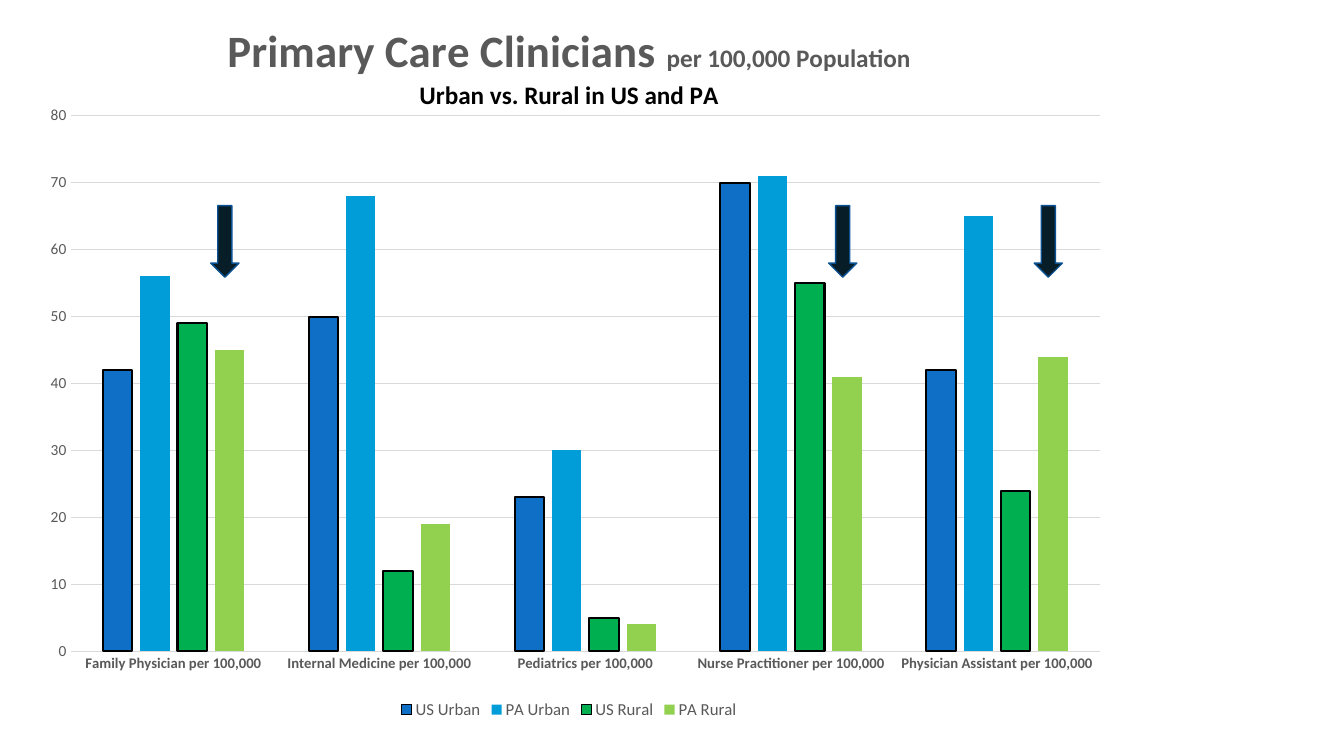
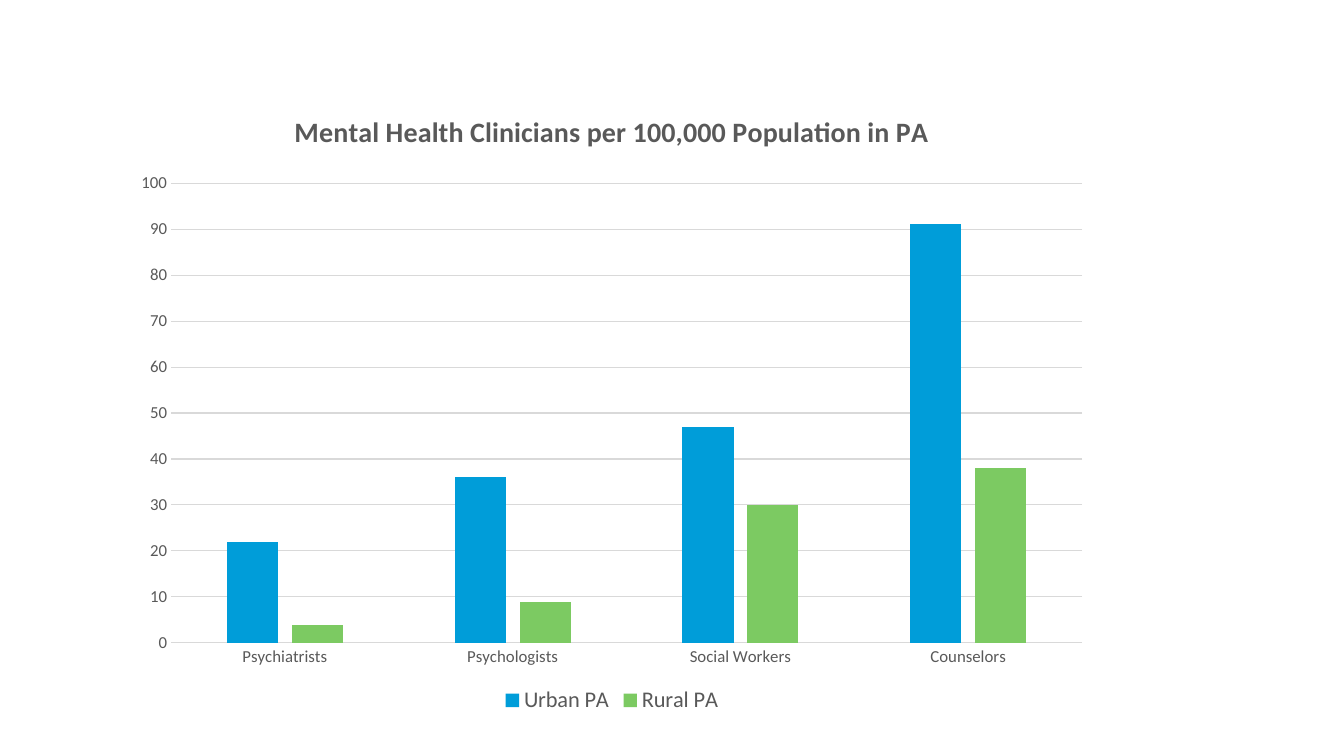
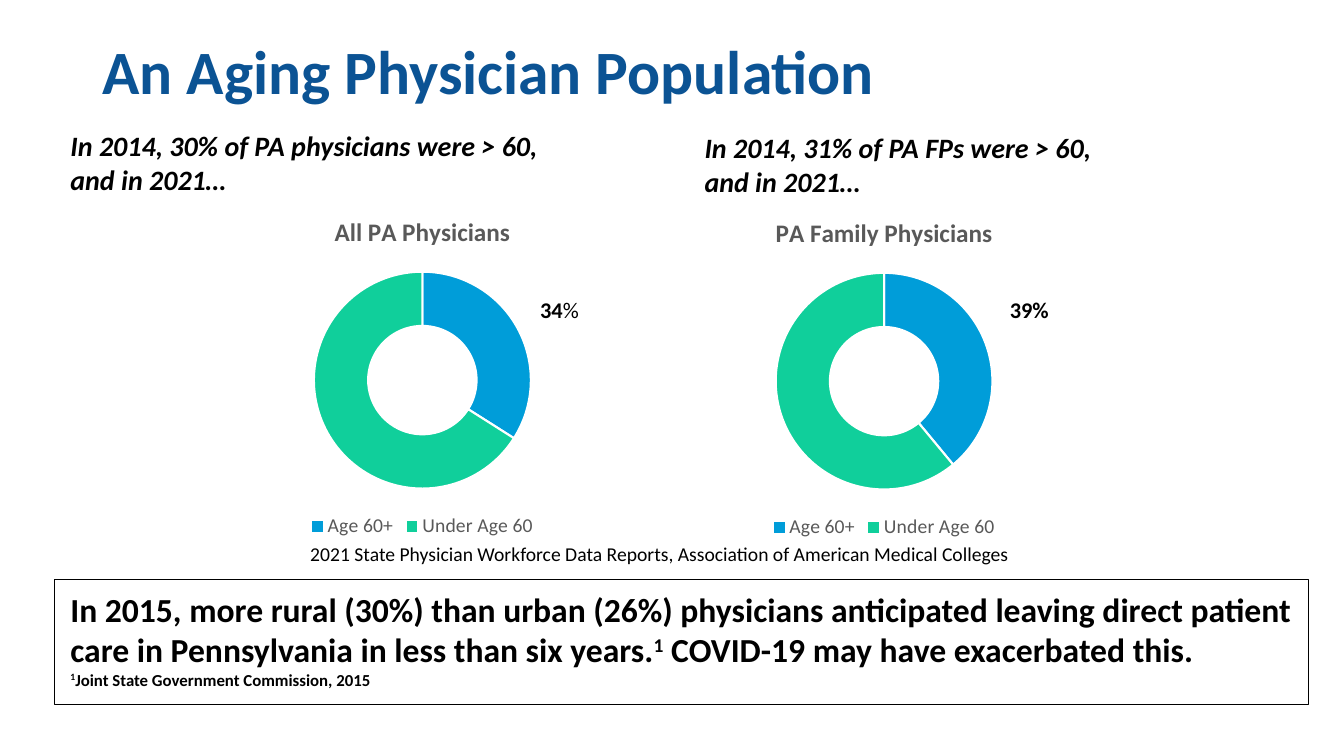
from lxml import etree
from pptx import Presentation
from pptx.chart.data import CategoryChartData as Data
from pptx.dml.color import RGBColor as Rgb
from pptx.enum.chart import XL_CHART_TYPE as Kind, XL_LEGEND_POSITION as Pos, XL_TICK_MARK as Tick
from pptx.enum.shapes import MSO_SHAPE as Shape
from pptx.enum.text import PP_ALIGN as Align
from pptx.oxml.ns import qn
from pptx.util import Inches, Pt

INK = {"black": "000000", "white": "FFFFFF", "grey": "595959", "rule": "D9D9D9",
       "navy": "0B5394", "edge": "0B5292", "dark": "071D28", "blue": "0F6FC6",
       "sky": "009DD9", "green": "00B050", "lime": "92D050", "leaf": "7CCA62",
       "mint": "10CF9B"}
FONT = "Calibri"
COL, RING = Kind.COLUMN_CLUSTERED, Kind.DOUGHNUT

deck = Presentation()
deck.slide_width, deck.slide_height = Inches(13.33), Inches(7.5)
W, H = deck.slide_width, deck.slide_height
care, mind, aging = [deck.slides.add_slide(deck.slide_layouts[6]) for _ in range(3)]


def place(*box):
    """Turn left, top, width, height in percent of the slide into lengths."""
    return [int(part * side / 100) for part, side in zip(box, (W, H, W, H))]


def write(frame, paras):
    """Each paragraph is size, colour, bold, italic and (text, changes) runs."""
    for i, (size, ink, bold, slant, runs) in enumerate(paras):
        para = frame.add_paragraph() if i else frame.paragraphs[0]
        font = para.font
        font.name, font.size, font.bold, font.italic = FONT, Pt(size), bold, slant
        font.color.rgb = Rgb.from_string(INK[ink])
        for words, diff in runs:
            run = para.add_run()
            run.text = words
            if "size" in diff:
                run.font.size = Pt(diff["size"])
            if "bold" in diff:
                run.font.bold = diff["bold"]
            if "base" in diff:
                run._r.get_or_add_rPr().set("baseline", diff["base"])


# Charts: slide, kind, box, title, title paragraphs, legend size, plot area, groups, series
ages = ["Age 60+", "Under Age 60"]
charts = [
    (care, COL, (2.03, 0, 80.63, 95.73),
     [(32, "grey", True, False, [("Primary Care Clinicians ", {}),
                                 ("per 100,000 Population", {"size": 18})]),
      (18, "black", True, False, [("Urban vs. Rural in US and PA", {})])],
     12, (0.04, 0.16, 0.95, 0.74),
     [job + " per 100,000" for job in ("Family Physician", "Internal Medicine", "Pediatrics",
                                       "Nurse Practitioner", "Physician Assistant")],
     [("US Urban", (42, 50, 23, 70, 42), "blue"), ("PA Urban", (56, 68, 30, 71, 65), "sky"),
      ("US Rural", (49, 12, 5, 55, 24), "green"), ("PA Rural", (45, 19, 4, 41, 44), "lime")]),
    (mind, COL, (9.08, 11.73, 72.9, 83.33),
     [(20, "grey", True, False,
       [("Mental Health Clinicians per 100,000 Population in PA", {})])],
     16, (0.05, 0.15, 0.93, 0.73),
     ["Psychiatrists", "Psychologists", "Social Workers", "Counselors"],
     [("Urban PA", (22, 36, 47, 91), "sky"), ("Rural PA", (4, 9, 30, 38), "leaf")]),
    (aging, RING, (13.88, 26.13, 35.1, 45.6),
     [(18, "grey", True, False, [("All PA Physicians", {})])],
     14, (0.27, 0.21, 0.46, 0.64), ages, [("Series 1", (34, 66), "sky")]),
    (aging, RING, (48.98, 26.27, 33.6, 45.6),
     [(18, "grey", True, False, [("PA Family Physicians", {})])],
     14, (0.26, 0.21, 0.48, 0.64), ages, [("Series 1", (39, 61), "sky")]),
]
for slide, kind, box, title, size, area, cats, rows in charts:
    data = Data()
    data.categories = cats
    for name, vals, _ in rows:
        data.add_series(name, vals)
    chart = slide.shapes.add_chart(kind, *place(*box), data).chart
    chart.font.name, chart.font.size = FONT, Pt(10)
    chart.has_title = True
    write(chart.chart_title.text_frame, title)
    chart.chart_title.include_in_layout = False
    chart.has_legend = True
    key = chart.legend
    key.position, key.include_in_layout = Pos.BOTTOM, False
    key.font.name, key.font.size = FONT, Pt(size)
    key.font.color.rgb = Rgb.from_string(INK["grey"])

    # Fixed inner plot area
    zone = chart._chartSpace.find(".//" + qn("c:plotArea"))
    for old in zone.findall(qn("c:layout")):
        zone.remove(old)
    layout = etree.Element(qn("c:layout"))
    zone.insert(0, layout)
    manual = etree.SubElement(layout, qn("c:manualLayout"))
    for tag, val in zip(("layoutTarget", "xMode", "yMode", "x", "y", "w", "h"),
                        ("inner", "edge", "edge", *area)):
        etree.SubElement(manual, qn("c:" + tag)).set("val", str(val))

    plot = chart.plots[0]
    plot.vary_by_categories = kind == RING
    if kind == RING:
        zone.find(".//" + qn("c:holeSize")).set("val", "75")
        for i, ink in enumerate(("sky", "mint")):
            look = plot.series[0].points[i].format
            look.fill.solid()
            look.fill.fore_color.rgb = Rgb.from_string(INK[ink])
            look.line.color.rgb = Rgb.from_string(INK["white"])
            look.line.width = Pt(1.5)
        continue

    # Columns and axes
    plot.gap_width, plot.overlap = 219, -27
    for bars, (name, _, ink) in zip(plot.series, rows):
        bars.format.fill.solid()
        bars.format.fill.fore_color.rgb = Rgb.from_string(INK[ink])
        if name.startswith("US"):
            bars.format.line.color.rgb = Rgb.from_string(INK["black"])
            bars.format.line.width = Pt(1.5)
    base, scale = chart.category_axis, chart.value_axis
    sizes = (10.5, 11) if slide is care else (12, 12)
    for axis, pts in zip((base, scale), sizes):
        axis.major_tick_mark = axis.minor_tick_mark = Tick.NONE
        font = axis.tick_labels.font
        font.name, font.size, font.bold = FONT, Pt(pts), slide is care and axis is base
        font.color.rgb = Rgb.from_string(INK["grey"])
    scale.minimum_scale, scale.major_unit = 0, 10
    scale.maximum_scale = 80 if slide is care else 100
    scale.format.line.fill.background()
    for line in (base.format.line, scale.major_gridlines.format.line):
        line.color.rgb = Rgb.from_string(INK["rule"])
        line.width = Pt(0.75)

# Arrows over rural bars, and the frame of the closing note
marks = [(care, Shape.DOWN_ARROW, (left, 27.2, 2.1, 9.47), "dark", "edge")
         for left in (15.68, 61.65, 76.95)]
marks.append((aging, Shape.RECTANGLE, (4.05, 76.67, 93.3, 16.53), None, "black"))
for slide, form, box, fill, edge in marks:
    mark = slide.shapes.add_shape(form, *place(*box))
    mark.shadow.inherit = False
    if fill:
        mark.fill.solid()
        mark.fill.fore_color.rgb = Rgb.from_string(INK[fill])
    else:
        mark.fill.background()
    mark.line.color.rgb = Rgb.from_string(INK[edge])
    mark.line.width = Pt(1)

# Texts of the aging slide
texts = [
    ((6.9, 4.8, 86.25, 19.33),
     [(44, "navy", True, False, [("An Aging Physician Population", {})])]),
    ((4.5, 71.07, 89.18, 5.6),
     [(14, "black", False, False, [("2021 State Physician Workforce Data Reports, "
                                    "Association of American Medical Colleges", {})])]),
    ((39.45, 38.53, 10.88, 4.67),
     [(16, "black", True, False, [("34", {}), ("%", {"bold": False})])]),
    ((74.4, 38.53, 10.88, 4.67), [(16, "black", True, False, [("39%", {})])]),
    ((4.5, 16.4, 37.88, 10.27),
     [(20, "black", True, True,
       [("In 2014, 30% of PA physicians were > 60, and in 2021…", {})])]),
    ((51.68, 16.67, 31.73, 10.27),
     [(20, "black", True, True, [("In 2014, 31% of PA FPs were > 60, and in 2021…", {})])]),
    ((4.5, 77.2, 92.78, 14.8),
     [(24, "black", True, False,
       [("In 2015, more rural (30%) than urban (26%) physicians anticipated leaving "
         "direct patient care in Pennsylvania in less than six years.", {}),
        ("1", {"base": "30000"}), (" COVID-19 may have exacerbated this.", {})]),
      (12, "black", True, False,
       [("1", {"base": "30000"}), ("Joint State Government Commission, 2015", {})])]),
]
for i, (box, paras) in enumerate(texts):
    frame = aging.shapes.add_textbox(*place(*box)).text_frame
    frame.word_wrap = True
    write(frame, paras)
    if i == 0:
        frame.paragraphs[0].line_spacing = 0.9
    if i == 1:
        frame.paragraphs[0].alignment = Align.CENTER

deck.save("out.pptx")
